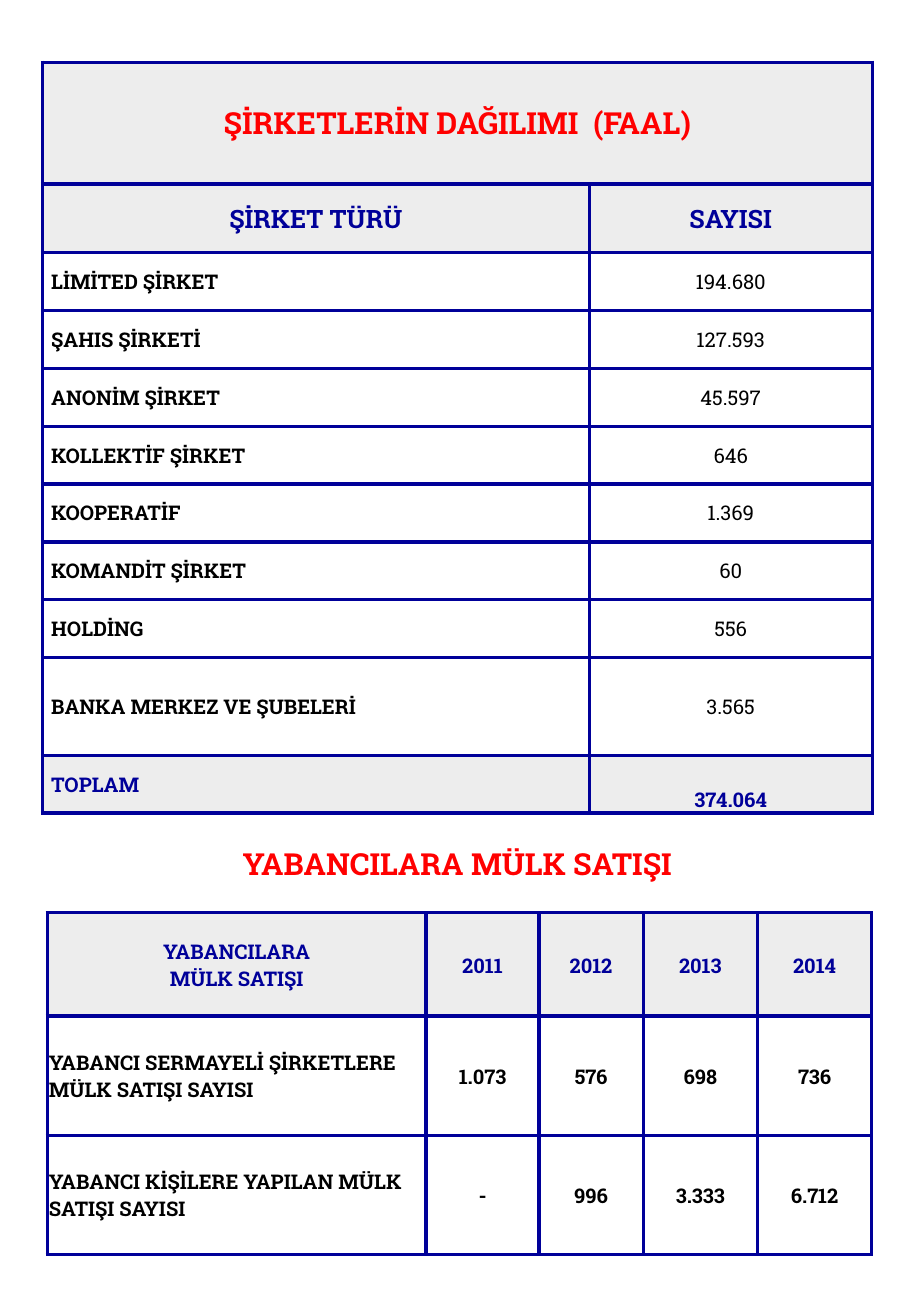
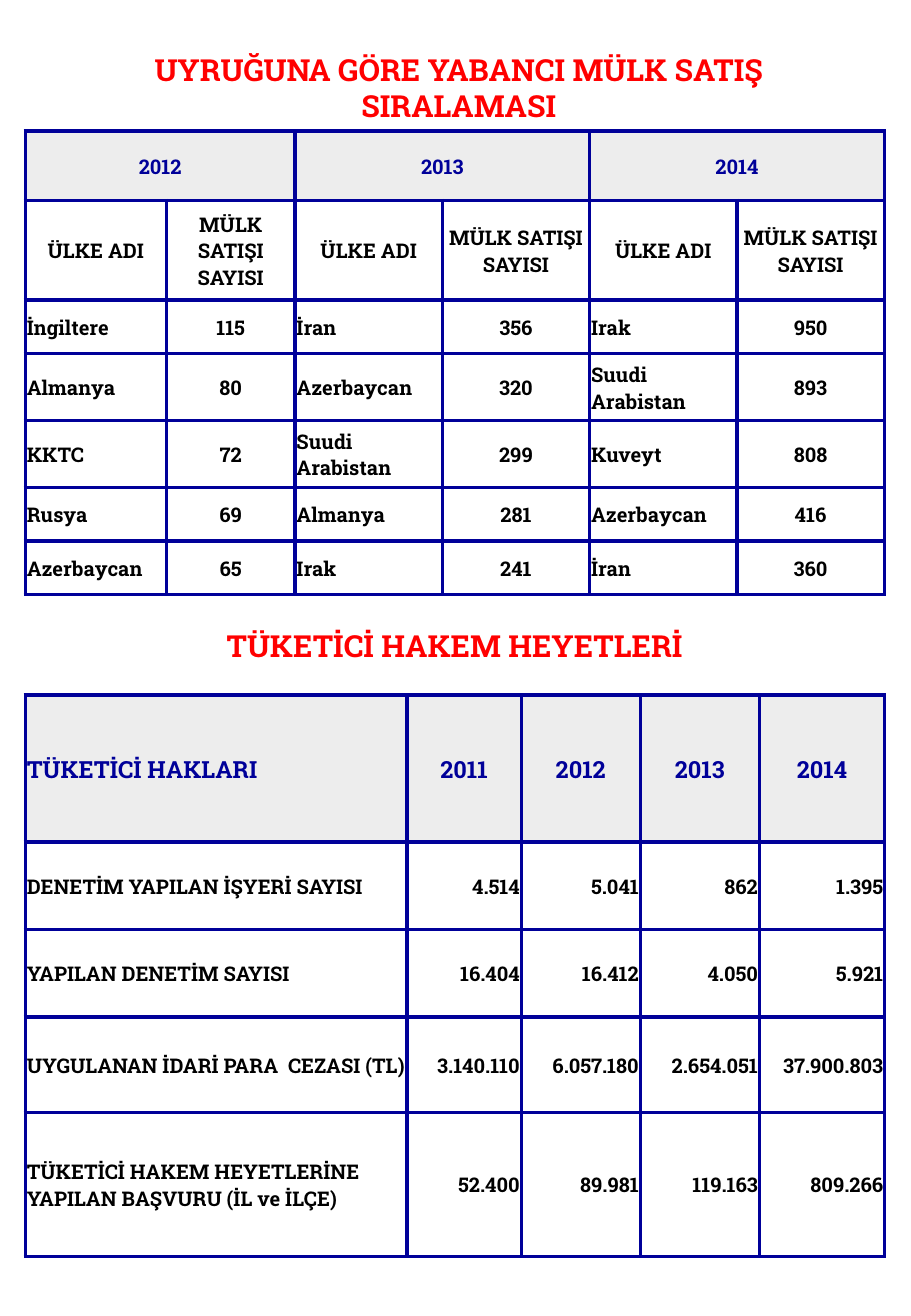
from itertools import cycle

from lxml.etree import SubElement
from pptx import Presentation
from pptx.dml.color import RGBColor
from pptx.enum.text import MSO_ANCHOR as Anchor, MSO_AUTO_SIZE as AutoSize, PP_ALIGN as Align
from pptx.oxml.ns import qn
from pptx.util import Cm, Pt

COLORS = {"navy": "000099", "red": "FF0000", "black": "000000",
          "shade": "EDEDED", "white": "FFFFFF"}
FONT = "Roboto Slab"
BORDER = Pt(2.25)
TIGHT = (0.03, 0.03, 0.03, 0)
ROOMY = (0.18, 0.1, 0.18, 0.1)

# A row style is a fill and the formats its columns take in turn.
LEFT = {"align": Align.LEFT}
CENTER = {"align": Align.CENTER}
RIGHT = {"align": Align.RIGHT}
INDENTED = {"align": Align.LEFT, "indent": 0.2}
HEADING = {"size": 18, "color": "red"}
HEADER = ("shade", [{"color": "navy"}])


def write_text(frame, text, size=12, color="black", bold=True,
               align=Align.CENTER, indent=0):
    frame.text = text
    frame.word_wrap = True
    frame.margin_left += Cm(indent)
    for paragraph in frame.paragraphs:
        paragraph.alignment = align
        for run in paragraph.runs:
            run.font.name = FONT
            run.font.size = Pt(size)
            run.font.bold = bold
            run.font.color.rgb = RGBColor.from_string(COLORS[color])


def add_grid(slide, left, top, widths, rows, margins=TIGHT):
    """Add a ruled table; each row is (height, style, texts), None joins the cell on its left."""
    height = sum(row[0] for row in rows)
    grid = slide.shapes.add_table(len(rows), len(widths), Cm(left), Cm(top),
                                  Cm(sum(widths)), Cm(height)).table
    grid.first_row = grid.horz_banding = False
    for column, width in zip(grid.columns, widths):
        column.width = Cm(width)
    for r, (row_height, (fill, formats), texts) in enumerate(rows):
        grid.rows[r].height = Cm(row_height)
        for c, (text, text_format) in enumerate(zip(texts, cycle(formats))):
            cell = grid.cell(r, c)
            cell.vertical_anchor = Anchor.MIDDLE
            (cell.margin_left, cell.margin_top,
             cell.margin_right, cell.margin_bottom) = map(Cm, margins)
            for side in ("a:lnL", "a:lnR", "a:lnT", "a:lnB"):
                line = SubElement(cell._tc.get_or_add_tcPr(), qn(side), w=str(BORDER))
                SubElement(SubElement(line, qn("a:solidFill")), qn("a:srgbClr"),
                           val=COLORS["navy"])
            cell.fill.solid()
            cell.fill.fore_color.rgb = RGBColor.from_string(COLORS[fill])
            if text is None:
                grid.cell(r, c - 1).merge(cell)
            else:
                write_text(cell.text_frame, text, **text_format)
    return grid


prs = Presentation()
prs.slide_width, prs.slide_height = Cm(19.05), Cm(27.51)
title_only = prs.slide_layouts[5]
companies_slide = prs.slides.add_slide(title_only)
sales_slide = prs.slides.add_slide(title_only)

# Headings
arbitration_heading = sales_slide.shapes.add_textbox(0, 0, 0, 0)
for heading, text, left, top, width, height in [
    (companies_slide.shapes.title, "YABANCILARA MÜLK SATIŞI", 0.89, 17.53, 17.35, 1.02),
    (sales_slide.shapes.title, "UYRUĞUNA GÖRE YABANCI MÜLK SATIŞ SIRALAMASI",
     0.97, 0.94, 17.25, 1.8),
    (arbitration_heading, "TÜKETİCİ HAKEM HEYETLERİ", 0.53, 12.98, 17.96, 1.02),
]:
    heading.left, heading.top = Cm(left), Cm(top)
    heading.width, heading.height = Cm(width), Cm(height)
    heading.text_frame.auto_size = AutoSize.NONE
    heading.text_frame.vertical_anchor = Anchor.TOP
    write_text(heading.text_frame, text, **HEADING)

# Active companies by type
company_row = ("white", [INDENTED, {"bold": False}])
company_counts = [
    ("LİMİTED ŞİRKET", "194.680"),
    ("ŞAHIS ŞİRKETİ", "127.593"),
    ("ANONİM ŞİRKET", "45.597"),
    ("KOLLEKTİF ŞİRKET", "646"),
    ("KOOPERATİF", "1.369"),
    ("KOMANDİT ŞİRKET", "60"),
    ("HOLDİNG", "556"),
]
companies = add_grid(companies_slide, 0.89, 1.3, [11.43, 5.92], [
    (2.55, ("shade", [HEADING]), ("ŞİRKETLERİN DAĞILIMI  (FAAL)", None)),
    (1.43, ("shade", [{"size": 15, "color": "navy"}]), ("ŞİRKET TÜRÜ", "SAYISI")),
    *[(1.21, company_row, counts) for counts in company_counts],
    (2.05, company_row, ("BANKA MERKEZ VE ŞUBELERİ", "3.565")),
    (1.2, ("shade", [{"color": "navy", **INDENTED}, {"color": "navy"}]),
     ("TOPLAM", "374.064")),
], ROOMY)
total = companies.cell(len(companies.rows) - 1, 1)
total.vertical_anchor = Anchor.BOTTOM
total.margin_bottom = 0

# Property sales to foreigners
years = ("2011", "2012", "2013", "2014")
sales_row = ("white", [LEFT] + [CENTER] * len(years))
add_grid(companies_slide, 0.99, 19.08, [7.92, 2.36, 2.18, 2.39, 2.39], [
    (2.16, HEADER, ("YABANCILARA\nMÜLK SATIŞI", *years)),
    (2.49, sales_row, ("YABANCI SERMAYELİ ŞİRKETLERE MÜLK SATIŞI SAYISI",
                       "1.073", "576", "698", "736")),
    (2.49, sales_row, ("YABANCI KİŞİLERE YAPILAN MÜLK SATIŞI SAYISI",
                       "-", "996", "3.333", "6.712")),
])

# Sales ranked by nationality
country_row = ("white", [LEFT, CENTER])
add_grid(sales_slide, 0.53, 2.74, [2.95, 2.69] + [3.08] * 4, [
    (1.45, HEADER, ("2012", None, "2013", None, "2014", None)),
    (2.08, ("white", [CENTER]), ("ÜLKE ADI", "MÜLK SATIŞI\nSAYISI") * 3),
    (1.12, country_row, ("İngiltere", "115", "İran", "356", "Irak", "950")),
    (1.4, country_row, ("Almanya", "80", "Azerbaycan", "320", "Suudi Arabistan", "893")),
    (1.4, country_row, ("KKTC", "72", "Suudi Arabistan", "299", "Kuveyt", "808")),
    (1.12, country_row, ("Rusya", "69", "Almanya", "281", "Azerbaycan", "416")),
    (1.12, country_row, ("Azerbaycan", "65", "Irak", "241", "İran", "360")),
])

# Consumer rights
year_header = {"size": 14, "color": "navy"}
consumer_header = {**year_header, "align": Align.LEFT, "indent": 0.97}
consumer_row = ("white", [LEFT] + [RIGHT] * len(years))
add_grid(sales_slide, 0.53, 14.53, [7.98, 2.39, 2.49, 2.49, 2.62], [
    (3.07, ("shade", [consumer_header] + [year_header] * len(years)),
     ("TÜKETİCİ HAKLARI", *years)),
    (1.83, consumer_row, ("DENETİM YAPILAN İŞYERİ SAYISI",
                          "4.514", "5.041", "862", "1.395")),
    (1.83, consumer_row, ("YAPILAN DENETİM SAYISI",
                          "16.404", "16.412", "4.050", "5.921")),
    (1.99, consumer_row, ("UYGULANAN İDARİ PARA  CEZASI (TL)",
                          "3.140.110", "6.057.180", "2.654.051", "37.900.803")),
    (3.01, consumer_row, ("TÜKETİCİ HAKEM HEYETLERİNE YAPILAN BAŞVURU (İL ve İLÇE)",
                          "52.400", "89.981", "119.163", "809.266")),
])

prs.save("out.pptx")
